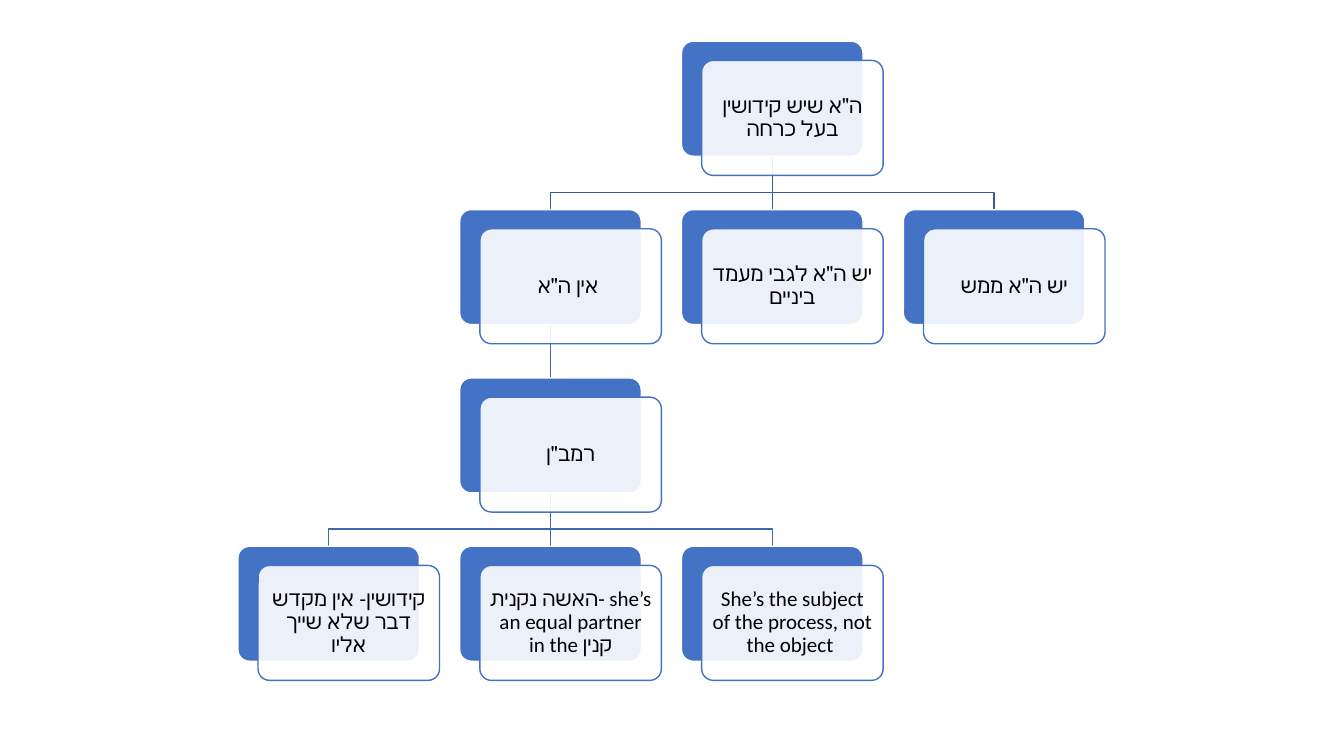
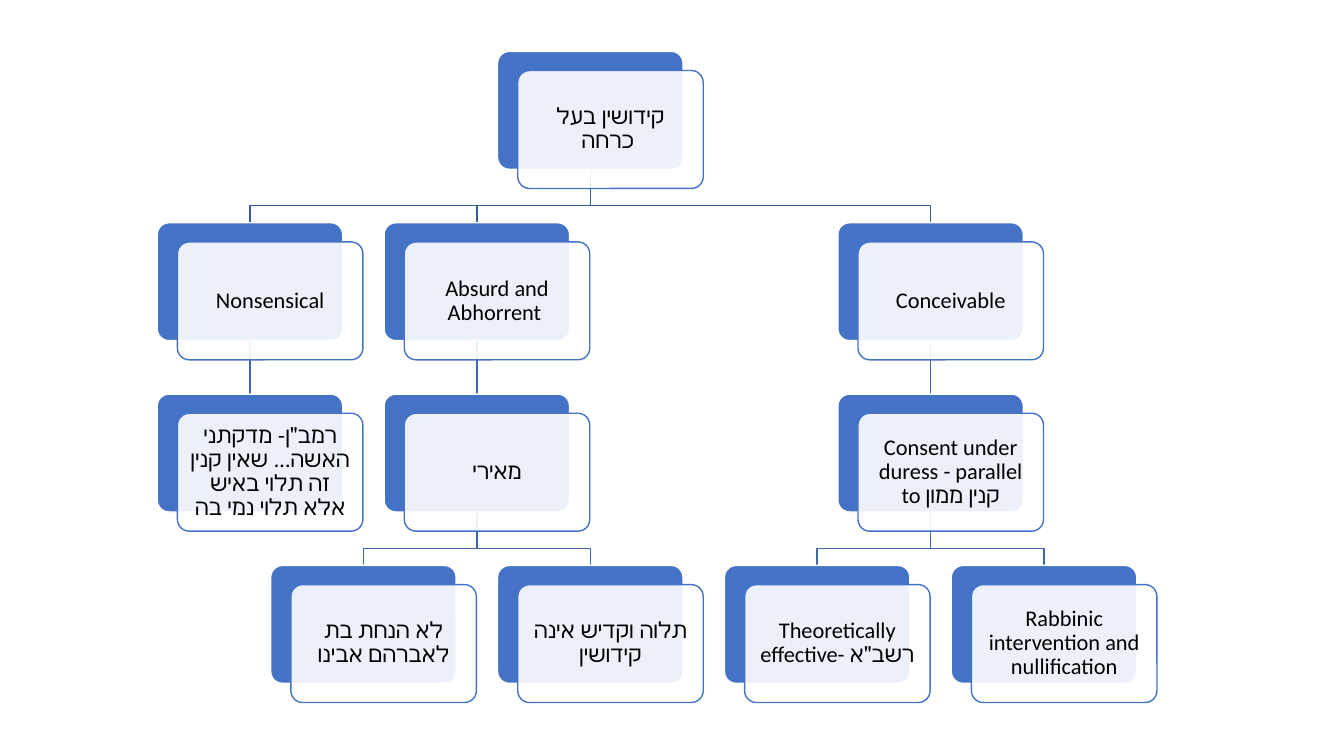
import dataclasses

import lxml.etree
import pptx
import pptx.dml.color
import pptx.enum.shapes
import pptx.enum.text
import pptx.oxml.ns
import pptx.util

Inches = pptx.util.Inches
Pt = pptx.util.Pt
RGBColor = pptx.dml.color.RGBColor
qn = pptx.oxml.ns.qn

# Shared look
BLUE = RGBColor(0x44, 0x72, 0xC4)
TOP_LINK = RGBColor(0x36, 0x5B, 0x9D)
LOWER_LINK = RGBColor(0x3E, 0x67, 0xB2)
WHITE = RGBColor(0xFF, 0xFF, 0xFF)
BLACK = RGBColor(0x00, 0x00, 0x00)
FONT = "Calibri"
CARD_OPACITY = "90000"
CORNER = 0.1
CARD_SHIFT = (0.2, 0.19)
BEND_ABOVE_CHILD = 0.17
PARAGRAPH_FORMAT = {
    "alignment": pptx.enum.text.PP_ALIGN.CENTER,
    "line_spacing": 0.9,
}


@dataclasses.dataclass
class Node:
    """A card in the tree; its column is counted in column steps."""
    column: float
    spans: list
    children: list = dataclasses.field(default_factory=list)


@dataclasses.dataclass
class Grid:
    """Measures of one chart, in inches; text size in points."""
    left: float
    top: float
    column_step: float
    level_step: float
    width: float
    height: float
    margin: float
    size: int

    def corner(self, node, level):
        return (self.left + node.column * self.column_step,
                self.top + level * self.level_step)


def set_all(target, values):
    for name, value in values.items():
        setattr(target, name, value)


def style_line(shape, color):
    shape.line.color.rgb = color
    shape.line.width = Pt(1)


def add_link(page, grid, parent, child, level):
    """Line from the foot of a parent to the head of its child."""
    parent_left, parent_top = grid.corner(parent, level)
    child_left, child_top = grid.corner(child, level + 1)
    start_x = Inches(parent_left + grid.width / 2)
    start_y = Inches(parent_top + grid.height)
    end_x = Inches(child_left + grid.width / 2)
    end_y = Inches(child_top)
    if start_x == end_x:
        link = page.shapes.add_connector(
            pptx.enum.shapes.MSO_CONNECTOR.STRAIGHT,
            start_x, start_y, end_x, end_y)
        lxml.etree.SubElement(link._element.spPr, qn("a:effectLst"))
    else:
        bend_y = Inches(child_top - BEND_ABOVE_CHILD)
        outline = page.shapes.build_freeform(start_x, start_y)
        outline.add_line_segments(
            [(start_x, bend_y), (end_x, bend_y), (end_x, end_y)], close=False)
        link = outline.convert_to_shape()
        link.fill.background()
        link.shadow.inherit = False
    style_line(link, LOWER_LINK if level else TOP_LINK)


def add_plate(page, grid, left, top, fill, line):
    plate = page.shapes.add_shape(
        pptx.enum.shapes.MSO_SHAPE.ROUNDED_RECTANGLE,
        Inches(left), Inches(top), Inches(grid.width), Inches(grid.height))
    plate.adjustments[0] = CORNER
    plate.shadow.inherit = False
    plate.fill.solid()
    plate.fill.fore_color.rgb = fill
    style_line(plate, line)
    return plate


def add_card(page, grid, node, level):
    """Blue plate with a translucent white text card over it."""
    left, top = grid.corner(node, level)
    add_plate(page, grid, left, top, BLUE, WHITE)
    card = add_plate(page, grid, left + CARD_SHIFT[0], top + CARD_SHIFT[1],
                     WHITE, BLUE)
    color = card._element.spPr.find(qn("a:solidFill"))[0]
    lxml.etree.SubElement(color, qn("a:alpha")).set("val", CARD_OPACITY)

    frame = card.text_frame
    set_all(frame, {
        "word_wrap": True,
        "vertical_anchor": pptx.enum.text.MSO_ANCHOR.MIDDLE,
        **{"margin_" + side: Inches(grid.margin)
           for side in ("left", "top", "right", "bottom")},
    })
    para = frame.paragraphs[0]
    set_all(para, PARAGRAPH_FORMAT)
    for text, font in node.spans:
        span = para.add_run()
        span.text = text
        set_all(span.font, {"name": font, "size": Pt(grid.size)})
        span.font.color.rgb = BLACK


def walk(node, level=0):
    yield node, level
    for child in node.children:
        yield from walk(child, level + 1)


def build_tree(deck, grid, root):
    """One slide: links at the back, cards in front."""
    page = deck.slides.add_slide(deck.slide_layouts[6])
    for node, level in walk(root):
        for child in node.children:
            add_link(page, grid, node, child, level)
    for node, level in walk(root):
        add_card(page, grid, node, level)


def topic(column, text, *children):
    return Node(column, [(text, FONT)], list(children))


# Slide 1: views on betrothal against her will
VIEWS_GRID = Grid(left=2.36, top=0.41, column_step=2.2, level_step=1.67,
                  width=1.8, height=1.14, margin=0.06, size=15)
VIEWS = topic(
    2, 'ה"א שיש קידושין בעל כרחה',
    topic(1, 'אין ה"א ',
          topic(1, 'רמב"ן',
                topic(0, "קידושין- אין מקדש דבר שלא שייך אליו"),
                topic(1, "האשה נקנית- she’s an equal partner in the קנין"),
                topic(2, "She’s the subject of the process, not the object "))),
    topic(2, 'יש ה"א לגבי מעמד ביניים'),
    topic(3, 'יש ה"א ממש'))

# Slide 2: how conceivable it is
DEGREES_GRID = Grid(left=1.56, top=0.51, column_step=2.25, level_step=1.7,
                    width=1.84, height=1.17, margin=0.07, size=16)
DEGREES = topic(
    1.5, "קידושין בעל כרחה ",
    topic(0, "Nonsensical",
          Node(0, [('רמב"ן- ', FONT),
                   ("מדקתני האשה... שאין קנין זה תלוי באיש אלא תלוי נמי בה",
                    "Arial")])),
    topic(1, "Absurd and Abhorrent ",
          topic(1, "מאירי",
                topic(0.5, "לא הנחת בת לאברהם אבינו"),
                topic(1.5, "תלוה וקדיש אינה קידושין"))),
    topic(3, "Conceivable",
          topic(3, "Consent under duress - parallel to קנין ממון",
                topic(2.5, 'Theoretically effective- רשב"א'),
                topic(3.5, "Rabbinic intervention and nullification"))))


def main():
    deck = pptx.Presentation()
    set_all(deck, {"slide_width": Inches(13.33), "slide_height": Inches(7.5)})
    build_tree(deck, VIEWS_GRID, VIEWS)
    build_tree(deck, DEGREES_GRID, DEGREES)
    deck.save("out.pptx")


if __name__ == "__main__":
    main()
